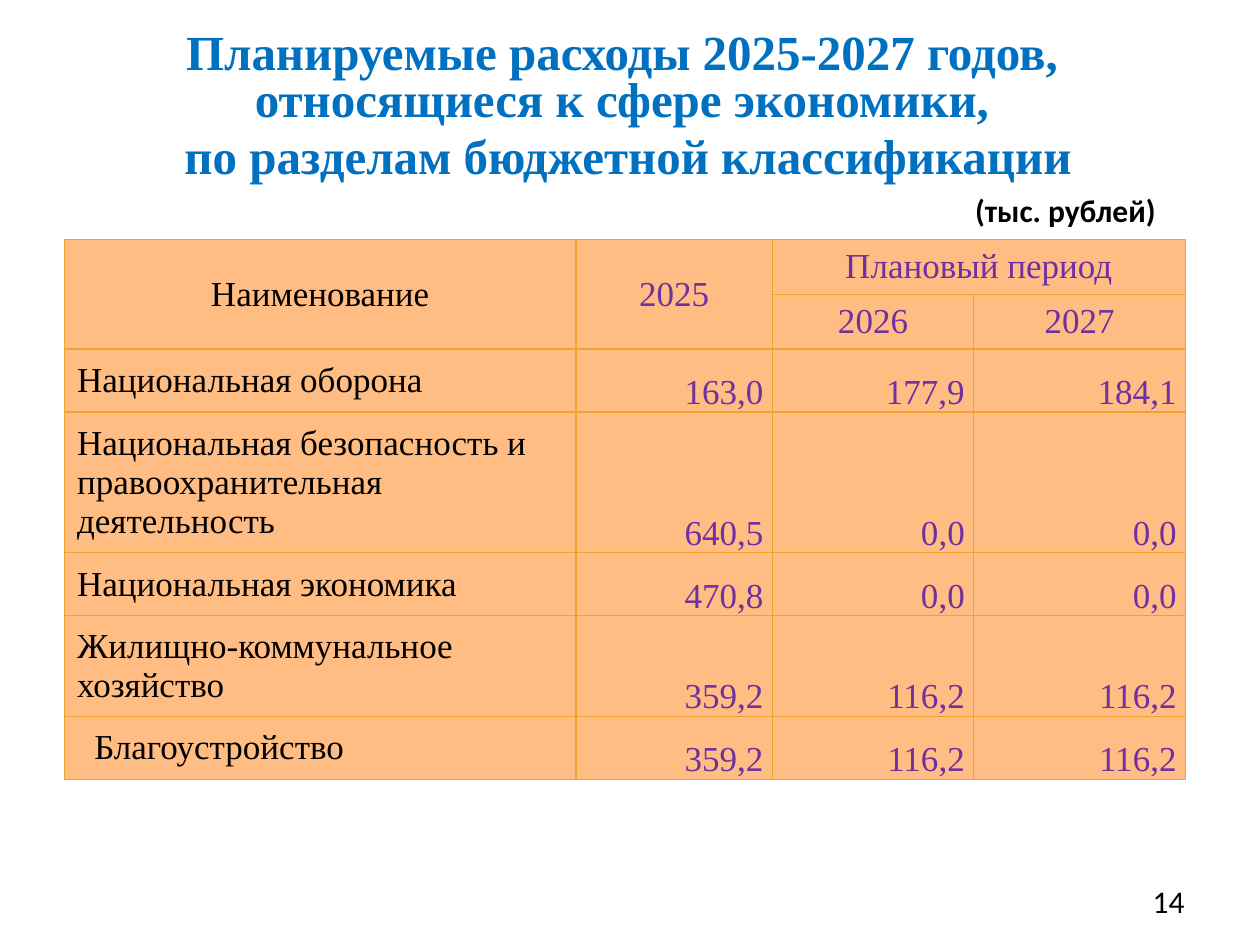
import pptx
import pptx.dml.color
import pptx.enum.text
import pptx.oxml
import pptx.oxml.ns
import pptx.util
from pptx.util import Cm, Pt

ALIGN = pptx.enum.text.PP_ALIGN
ANCHOR = pptx.enum.text.MSO_ANCHOR
SERIF = "Times New Roman"
BLACK, BLUE, PURPLE = "000000", "0070C0", "7030A0"
PEACH, ORANGE = "FFBD83", "F0A22E"


def rgb(value):
    return pptx.dml.color.RGBColor.from_string(value)


def format_text(tf, align, size, font, color, bold=False):
    for p in tf.paragraphs:
        p.alignment = align
        for r in p.runs:
            r.font.size = Pt(size)
            r.font.name = font
            r.font.bold = bold
            r.font.color.rgb = rgb(color)


prs = pptx.Presentation()
prs.slide_width, prs.slide_height = Cm(25.4), Cm(19.05)
s = prs.slides.add_slide(prs.slide_layouts[6])

# Title
tf = s.shapes.add_textbox(Cm(1.42), Cm(0.53), Cm(22.48), Cm(2.9)).text_frame
tf.word_wrap = True
tf.text = "Планируемые расходы 2025-2027 годов, \vотносящиеся к сфере экономики, "
tf.add_paragraph().text = "по разделам бюджетной классификации"
format_text(tf, ALIGN.CENTER, 28, SERIF, BLUE, True)
for p in tf.paragraphs:
    p.line_spacing = 0.8
    p.space_before = Pt(5.6)

# Table of expenses
rows = [
    ["Наименование", "2025", "Плановый период", ""],
    ["", "", "2026", "2027"],
    ["Национальная оборона", "163,0", "177,9", "184,1"],
    ["Национальная безопасность и правоохранительная деятельность",
     "640,5", "0,0", "0,0"],
    ["Национальная экономика", "470,8", "0,0", "0,0"],
    ["Жилищно-коммунальное хозяйство", "359,2", "116,2", "116,2"],
    ["Благоустройство", "359,2", "116,2", "116,2"],
]
widths = [10.31, 3.96, 4.06, 4.27]
heights = [1.09, 1.09, 1.27, 2.84, 1.27, 2.03, 1.27]
header_rows = 2

table = s.shapes.add_table(len(rows), len(widths), Cm(1.3), Cm(4.83),
                           Cm(sum(widths)), Cm(sum(heights))).table
for column, width in zip(table.columns, widths):
    column.width = Cm(width)
for row, height in zip(table.rows, heights):
    row.height = Cm(height)

for i, row in enumerate(rows):
    for j, text in enumerate(row):
        cell = table.cell(i, j)
        cell.text = text
        is_number = i >= header_rows and j > 0
        if is_number:
            align, cell.vertical_anchor = ALIGN.RIGHT, ANCHOR.BOTTOM
            cell.margin_left = cell.margin_right = Cm(0.18)
            cell.margin_top = cell.margin_bottom = 0
        else:
            align = ALIGN.CENTER if i < header_rows else ALIGN.LEFT
            cell.vertical_anchor = ANCHOR.MIDDLE
        format_text(cell.text_frame, align, 20, SERIF, PURPLE if j else BLACK)
        for side in ("lnL", "lnR", "lnT", "lnB"):
            cell._tc.get_or_add_tcPr().append(pptx.oxml.parse_xml(
                f'<a:{side} {pptx.oxml.ns.nsdecls("a")} w="{Pt(0.79)}"><a:solidFill>'
                f'<a:srgbClr val="{ORANGE}"/></a:solidFill></a:{side}>'))
        cell.fill.solid()
        cell.fill.fore_color.rgb = rgb(PEACH)

table.cell(len(rows) - 1, 0).margin_left = Cm(0.6)  # sub-item of the row above
table.cell(0, 0).merge(table.cell(1, 0))
table.cell(0, 1).merge(table.cell(1, 1))
table.cell(0, 2).merge(table.cell(0, 3))

# Unit note and page number
for text, left, top, width, bold in [
    ("(тыс. рублей)", 18.85, 3.73, 4.7, True),
    ("14", 18.21, 17.65, 5.92, False),
]:
    tf = s.shapes.add_textbox(Cm(left), Cm(top), Cm(width), Cm(1.02)).text_frame
    tf.word_wrap = True
    tf.vertical_anchor = ANCHOR.MIDDLE
    tf.text = text
    format_text(tf, ALIGN.RIGHT, 18, "Calibri", BLACK, bold)

prs.save("out.pptx")
